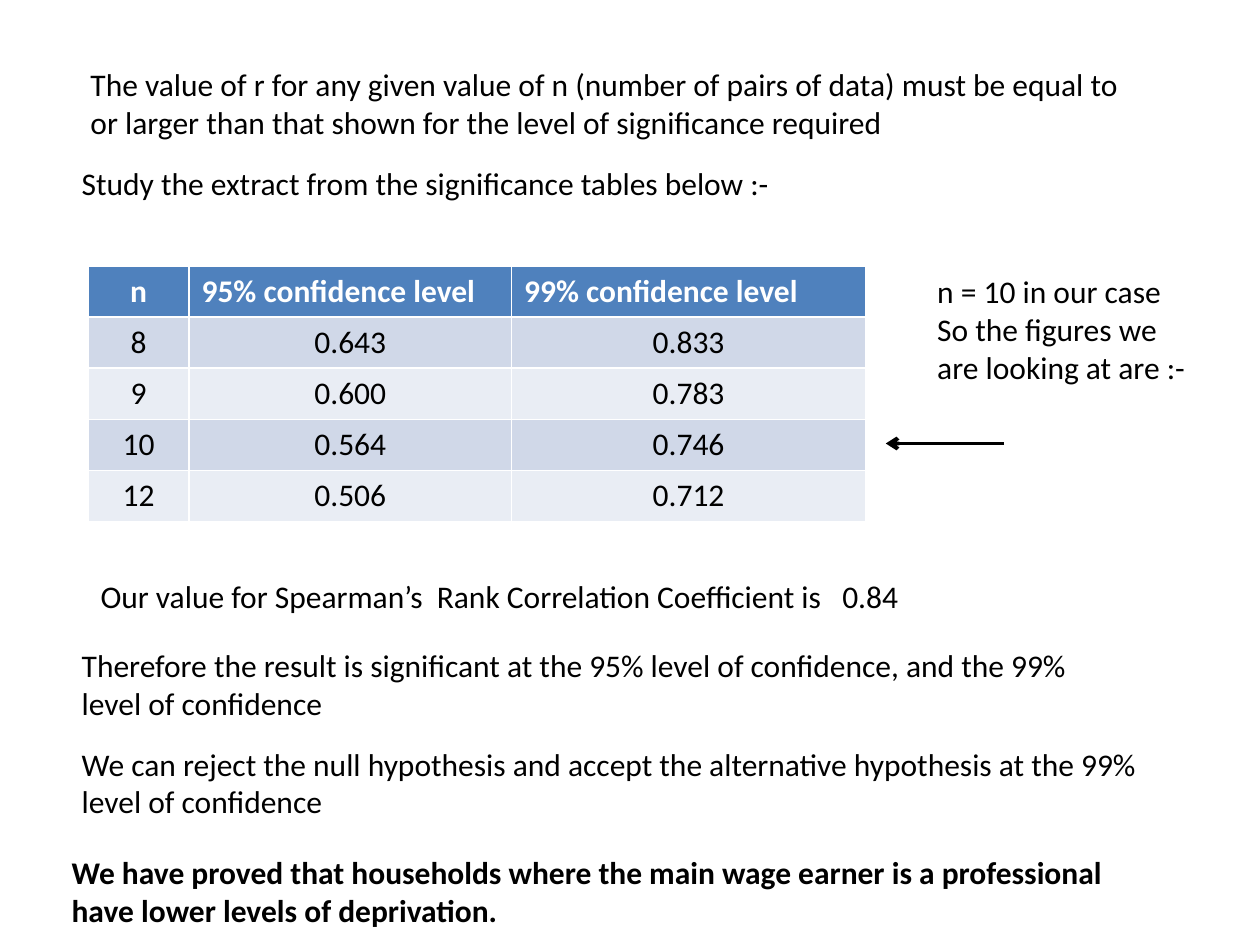
import pptx
import pptx.util
import pptx.dml.color
import pptx.enum.shapes
import pptx.enum.text
import pptx.oxml
import pptx.oxml.ns

Inches, Pt = pptx.util.Inches, pptx.util.Pt
RGB = pptx.dml.color.RGBColor
BLACK = RGB(0x00, 0x00, 0x00)
WHITE = RGB(0xFF, 0xFF, 0xFF)
HEAD = RGB(0x4F, 0x81, 0xBD)
BANDS = RGB(0xD0, 0xD8, 0xE8), RGB(0xE9, 0xED, 0xF4)


def add_run(para, text, color=BLACK, bold=False):
    run = para.add_run()
    run.text = text
    run.font.name = "Calibri"
    run.font.size = Pt(18)
    run.font.bold = bold
    run.font.color.rgb = color


deck = pptx.Presentation()
deck.slide_width, deck.slide_height = Inches(10), Inches(7.5)
slide = deck.slides.add_slide(deck.slide_layouts[6])

# Text: left, top, width, height, bold, paragraphs
notes = [
    (0.62, 0.47, 8.36, 0.71, False,
     ["The value of r for any given value of n (number of pairs of data) must be "
      "equal to or larger than that shown for the level of significance required"]),
    (0.55, 1.25, 6.72, 0.4, False,
     ["Study the extract from the significance tables below :-"]),
    (7.34, 2.11, 2.27, 1.01, False,
     ["n = 10 in our case", "So the figures we are looking at are :-"]),
    (0.7, 4.53, 7.97, 0.4, False,
     ["Our value for Spearman’s  Rank Correlation Coefficient is   0.84"]),
    (0.55, 5.08, 8.52, 0.71, False,
     ["Therefore the result is significant at the 95% level of confidence, "
      "and the 99% level of confidence"]),
    (0.55, 5.86, 8.59, 0.71, False,
     ["We can reject the null hypothesis and accept the alternative hypothesis "
      "at the 99% level of confidence"]),
    (0.47, 6.72, 8.91, 0.71, True,
     ["We have proved that households where the main wage earner is a "
      "professional have lower levels of deprivation."]),
]
for left, top, width, height, bold, lines in notes:
    box = slide.shapes.add_textbox(
        Inches(left), Inches(top), Inches(width), Inches(height))
    frame = box.text_frame
    frame.word_wrap = True
    frame.auto_size = pptx.enum.text.MSO_AUTO_SIZE.SHAPE_TO_FIT_TEXT
    for i, line in enumerate(lines):
        para = frame.add_paragraph() if i else frame.paragraphs[0]
        add_run(para, line, bold=bold)

# Significance table; its default style draws the white borders
rows = [
    ("n", "95% confidence level", "99% confidence level"),
    ("8", "0.643", "0.833"),
    ("9", "0.600", "0.783"),
    ("10", "0.564", "0.746"),
    ("12", "0.506", "0.712"),
]
table = slide.shapes.add_table(
    len(rows), 3, Inches(0.7), Inches(2.11), Inches(6.17), Inches(2.03)).table
for col, width in zip(table.columns, (0.8, 2.56, 2.81)):
    col.width = Inches(width)
for r, row in enumerate(rows):
    for c, text in enumerate(row):
        cell = table.cell(r, c)
        cell.fill.solid()
        cell.fill.fore_color.rgb = BANDS[(r - 1) % 2] if r else HEAD
        para = cell.text_frame.paragraphs[0]
        if r or c == 0:
            para.alignment = pptx.enum.text.PP_ALIGN.CENTER
        add_run(para, text, BLACK if r else WHITE, r == 0)

# Arrow to the row for n = 10
arrow = slide.shapes.add_connector(
    pptx.enum.shapes.MSO_CONNECTOR.STRAIGHT,
    Inches(7.97), Inches(3.52), Inches(7.03), Inches(3.52))
arrow.line.color.rgb = BLACK
arrow.line.width = Pt(2.25)
tip = pptx.oxml.parse_xml(
    "<a:tailEnd %s type='arrow'/>" % pptx.oxml.ns.nsdecls("a"))
arrow.line._get_or_add_ln().append(tip)
flat = pptx.oxml.parse_xml("<a:effectLst %s/>" % pptx.oxml.ns.nsdecls("a"))
arrow._element.spPr.append(flat)

deck.save("out.pptx")
